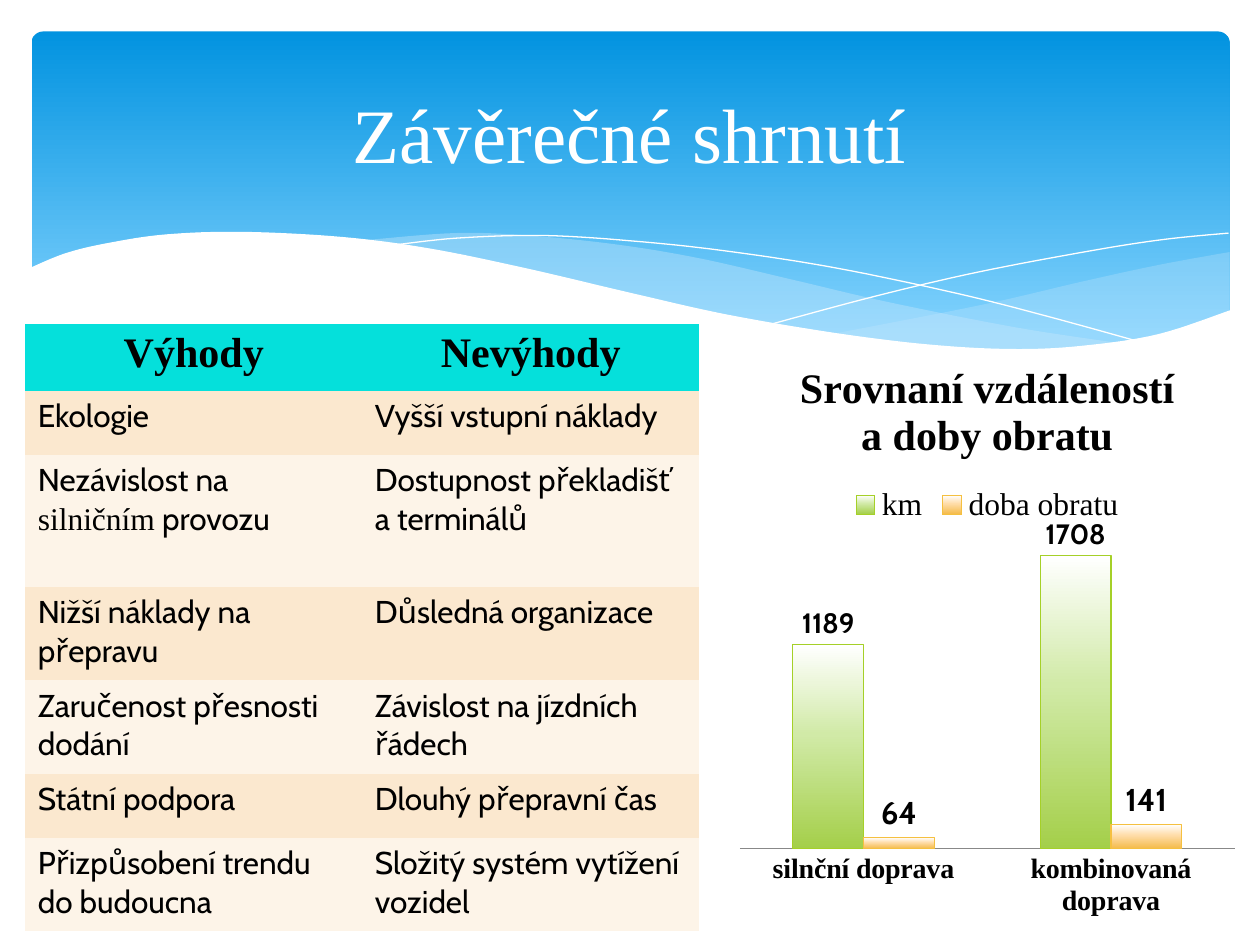
from copy import deepcopy

from lxml import etree
from pptx import Presentation, util as u
from pptx.chart.data import CategoryChartData
from pptx.dml.color import RGBColor
from pptx.enum import chart as ch, shapes, text
from pptx.oxml.ns import qn

COLORS = {
    "white": "FFFFFF", "black": "000000", "sky": "0293E0", "light": "83D3FE",
    "mist": "C6E7FC", "head": "05E0DB", "odd": "FBE8CF", "even": "FDF4E8",
    "axis": "888888", "green": "A5D028", "orange": "F5C040",
}
RGB = {name: RGBColor.from_string(value) for name, value in COLORS.items()}
SERIF, SANS = "Times New Roman", "Cabin"

prs = Presentation()
prs.slide_width, prs.slide_height = u.Inches(10), u.Inches(7.5)
CELL = prs.slide_width / 100  # grid of 100 columns and 75 rows
s = prs.slides.add_slide(prs.slide_layouts[5])


def curve(points, steps=8):
    """Catmull-Rom spline through grid points, as slide coordinates."""
    pts = [points[0], *points, points[-1]]
    out = [points[0]]
    for a, b, c, d in zip(pts, pts[1:], pts[2:], pts[3:]):
        for t in (i / steps for i in range(1, steps + 1)):
            out.append(tuple(
                0.5 * (2 * q + (r - p) * t + (2 * p - 5 * q + 4 * r - v) * t ** 2
                       + (3 * q - p - 3 * r + v) * t ** 3)
                for p, q, r, v in zip(a, b, c, d)))
    return [(x * CELL, y * CELL) for x, y in out]


def gradient(fill, stops):
    """Fill from top to bottom with (position, hex colour) stops."""
    fill.gradient()
    fill.gradient_angle = 270
    gs_list = fill.gradient_stops[0]._gs.getparent()
    for _ in stops[2:]:
        gs_list.append(deepcopy(gs_list[0]))
    for stop, (position, color) in zip(fill.gradient_stops, stops):
        stop.position = position
        stop.color.rgb = RGBColor.from_string(color)


# Banner
banner = s.shapes.add_shape(shapes.MSO_SHAPE.ROUNDED_RECTANGLE,
                            *(int(n * CELL) for n in (2.5, 2.5, 95.1, 27)))
banner.adjustments[0] = 0.034
banner.shadow.inherit = False
banner.line.fill.background()
gradient(banner.fill, [(0, COLORS["sky"]), (0.9, COLORS["light"])])

# Waves: curves joined end to end, fill colour, opacity in percent
waves = [
    ([[(97.6, 20), (92.1, 21), (86.1, 22.3), (77.9, 24.2), (66.1, 26.5)],
      [(66.1, 26.5), (73.2, 27.4), (80.3, 27.8), (87.2, 27.4), (93.5, 26.2), (97.6, 24.7)]],
     "mist", 29),
    ([[(89.3, 27.3), (80.7, 26), (70.6, 24), (62.9, 22.2), (55.5, 20.5), (48.9, 19.4),
       (42, 18.7), (36.1, 18.5), (28.6, 19.1)],
      [(28.6, 19.1), (36.2, 20.3), (44.9, 22.2), (56.6, 24.8), (66.5, 26.6), (74.8, 27.6),
       (81.8, 27.8), (89.3, 27.3)]],
     "mist", 40),
    ([[(30.9, 19.5), (36.3, 18.9), (43.3, 18.7), (51, 19.2), (58.2, 20), (66.5, 21.3),
       (76, 23.3), (83.1, 25.1), (90.7, 27.2)]], None, 100),
    ([[(61.3, 25.7), (69.5, 23.5), (77.6, 21.6), (86.6, 19.9), (92.4, 19), (97.5, 18.5)]],
     None, 100),
    ([[(97.7, 24.6), (92, 26.5), (86.3, 27.4), (80.9, 27.7), (74.4, 27.4), (66.8, 26.5),
       (57.9, 25), (50.3, 23.3), (41.8, 21.3), (34, 19.7), (27.1, 18.8), (19.3, 18.4),
       (13.2, 18.6), (8.5, 19.3), (5.2, 20.1), (2.3, 21.3)],
      [(2.3, 32.9), (97.7, 32.9)]],
     "white", 100),
]
for curves, color, opacity in waves:
    points = [pt for part in curves for pt in curve(part)]
    builder = s.shapes.build_freeform(*points[0])
    builder.add_line_segments(points[1:], close=color is not None)
    wave = builder.convert_to_shape()
    wave.shadow.inherit = False
    if color is None:
        wave.fill.background()
        wave.line.color.rgb = RGB["white"]
        wave.line.width = u.Pt(0)
        continue
    wave.line.fill.background()
    wave.fill.solid()
    wave.fill.fore_color.rgb = RGB[color]
    if opacity < 100:
        clr = wave._element.spPr.find(qn("a:solidFill"))[0]
        etree.SubElement(clr, qn("a:alpha")).set("val", str(opacity * 1000))

# Title, in front of the banner
title = s.shapes.title
s.shapes._spTree.append(title._element)
for name, value in dict(left=5, top=3.7, width=90, height=13.7).items():
    setattr(title, name, int(value * CELL))
tf = title.text_frame
tf.text = "Závěrečné shrnutí"
tf.vertical_anchor = text.MSO_ANCHOR.MIDDLE
p = tf.paragraphs[0]
p.alignment = text.PP_ALIGN.CENTER
p.font.name, p.font.size = SERIF, u.Pt(44)
p.font.color.rgb = RGB["white"]

# Table; a cell is a string or a list of runs, where odd runs are serif
rows = [
    (5.3, "Výhody", "Nevýhody"),
    (5.1, "Ekologie", "Vyšší vstupní náklady"),
    (10.5, ["Nezávislost na ", "silničním", " provozu"], "Dostupnost překladišť a terminálů"),
    (7.4, "Nižší náklady na přepravu", "Důsledná organizace"),
    (7.4, "Zaručenost přesnosti dodání", "Závislost na jízdních řádech"),
    (5.1, "Státní podpora", "Dlouhý přepravní čas"),
    (7.4, "Přizpůsobení trendu do budoucna", "Složitý systém vytížení vozidel"),
]
frame = s.shapes.add_table(len(rows), 2, *(int(n * CELL) for n in (2, 25.7, 53.5, 48.2)))
table = frame.table
NO_STYLE = "{2D5ABB26-0587-4C30-8999-92F81FD0307C}"
table._tbl.tblPr.find(qn("a:tableStyleId")).text = NO_STYLE
for i, (height, *cells) in enumerate(rows):
    table.rows[i].height = int(height * CELL)
    head = i == 0
    for j, content in enumerate(cells):
        cell = table.cell(i, j)
        cell.fill.solid()
        cell.fill.fore_color.rgb = RGB["head" if head else "odd" if i % 2 else "even"]
        p = cell.text_frame.paragraphs[0]
        p.alignment = text.PP_ALIGN.CENTER if head else text.PP_ALIGN.LEFT
        for k, words in enumerate([content] if isinstance(content, str) else content):
            r = p.add_run()
            r.text = words
            style = dict(name=SERIF if head or k % 2 else SANS,
                         size=u.Pt(24 if head else 18), bold=head)
            for name, value in style.items():
                setattr(r.font, name, value)
            r.font.color.rgb = RGB["black"]

# Chart
data = CategoryChartData()
data.categories = ["silnční doprava", "kombinovaná doprava"]
data.add_series("km", [1189, 1708])
data.add_series("doba obratu", [64, 141])
chart = s.shapes.add_chart(ch.XL_CHART_TYPE.COLUMN_CLUSTERED,
                           *(int(n * CELL) for n in (57.9, 26.5, 40.9, 47.2)), data).chart
chart.has_title = chart.has_legend = True
chart.chart_title.text_frame.text = "Srovnaní vzdáleností a doby obratu"
chart.chart_title.include_in_layout = False
chart.legend.position = ch.XL_LEGEND_POSITION.TOP
chart.legend.include_in_layout = False

values, categories = chart.value_axis, chart.category_axis
values.visible = values.has_major_gridlines = False
values.minimum_scale, values.maximum_scale = 0, 1800
categories.major_tick_mark = ch.XL_TICK_MARK.NONE
categories.format.line.color.rgb = RGB["axis"]

plot = chart.plots[0]
plot.gap_width, plot.overlap, plot.vary_by_categories = 150, 0, False
looks = [("green", "D1EAA7", "A4CF4A", 16), ("orange", "FFDDAA", "F4BB4A", 18)]
fonts = [
    (chart.font, SANS, 10, False),
    (chart.chart_title.text_frame.paragraphs[0].runs[0].font, SERIF, 24, True),
    (chart.legend.font, SERIF, 18, False),
    (categories.tick_labels.font, SERIF, 16, True),
]
for series, (edge, middle, end, size) in zip(plot.series, looks):
    gradient(series.format.fill, [(0, COLORS["white"]), (0.44, middle), (1, end)])
    series.format.line.color.rgb = RGB[edge]
    series.format.line.width = u.Pt(0.75)
    labels = series.data_labels
    labels.show_value = True
    labels.position = ch.XL_LABEL_POSITION.OUTSIDE_END
    fonts.append((labels.font, SANS, size, True))
for font, name, size, bold in fonts:
    font.name, font.size, font.bold = name, u.Pt(size), bold
    font.color.rgb = RGB["black"]

prs.save("out.pptx")
